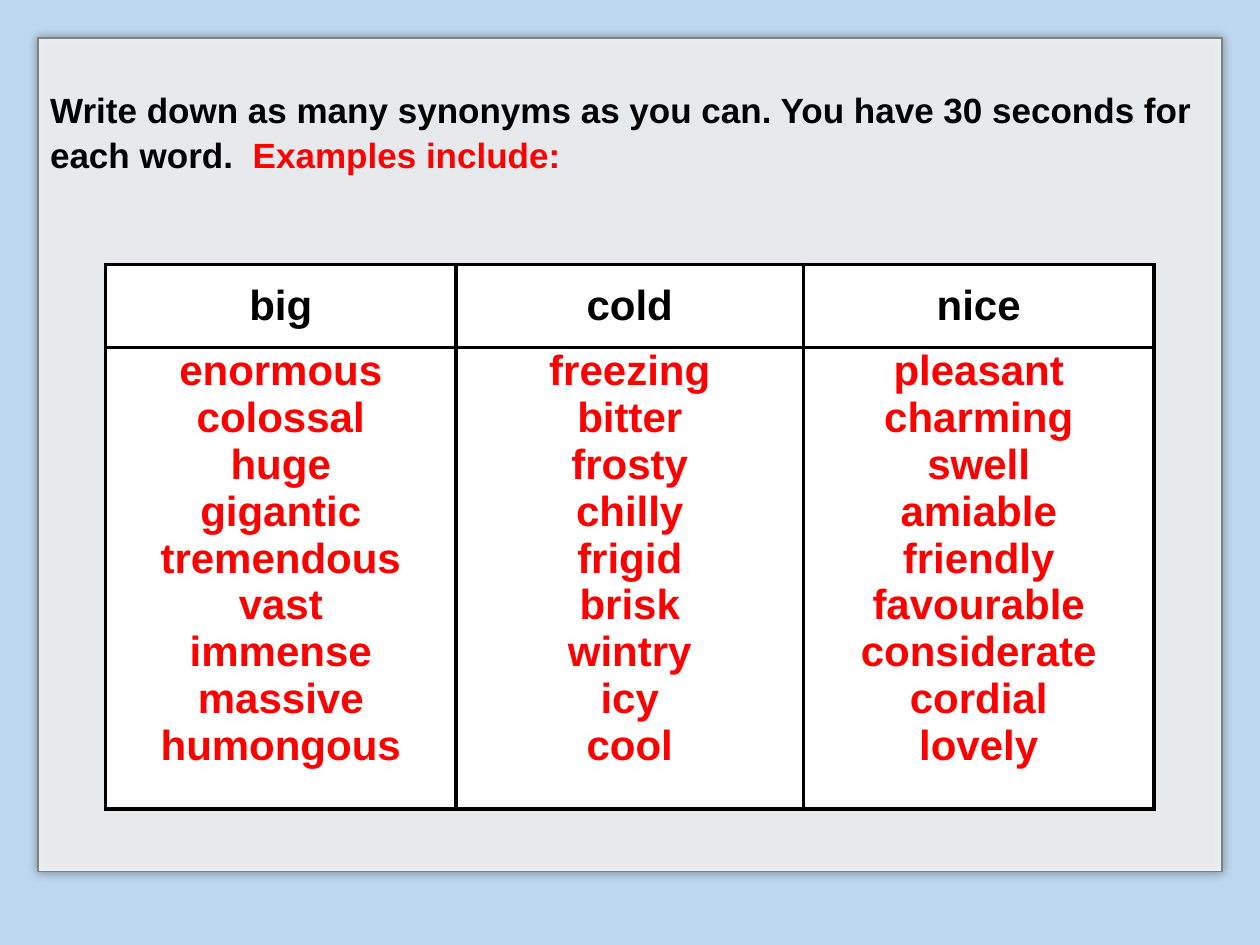
from dataclasses import dataclass

from lxml import etree
from pptx import Presentation
from pptx import util as u
from pptx.dml.color import RGBColor
from pptx.enum import shapes, text
from pptx.oxml.ns import qn


@dataclass(frozen=True)
class Theme:
    font: str = "Arial"
    background: str = "BDD7EE"
    panel: str = "FFFFFF"
    panel_line: str = "808080"
    ink: str = "000000"
    answer: str = "FF0000"
    instruction_size: int = 20
    word_size: int = 24
    grid_width: float = 2.25


SYNONYMS = {
    "big": ["enormous", "colossal", "huge", "gigantic", "tremendous",
            "vast", "immense", "massive", "humongous"],
    "cold": ["freezing", "bitter", "frosty", "chilly", "frigid",
             "brisk", "wintry", "icy", "cool"],
    "nice": ["pleasant", "charming", "swell", "amiable", "friendly",
             "favourable", "considerate", "cordial", "lovely"],
}


def add_solid_color(parent, color, opacity=None):
    """Append a:srgbClr, with an optional opacity in percent."""
    node = etree.SubElement(parent, qn("a:srgbClr"), val=color)
    if opacity is not None:
        etree.SubElement(node, qn("a:alpha"), val=str(opacity * 1000))


class SlideBuilder:
    def __init__(self, slide, theme):
        self.slide = slide
        self.theme = theme
        self.fill(slide.background, theme.background)

    def fill(self, target, color):
        target.fill.solid()
        target.fill.fore_color.rgb = RGBColor.from_string(color)

    def format_run(self, run, size, color):
        run.font.name = self.theme.font
        run.font.size = u.Pt(size)
        run.font.bold = True
        run.font.color.rgb = RGBColor.from_string(color)

    def add_panel(self, left, top, width, height, parts):
        """Add the translucent, glowing panel; parts are (wording, color) runs."""
        panel = self.slide.shapes.add_shape(
            shapes.MSO_SHAPE.RECTANGLE,
            u.Cm(left), u.Cm(top), u.Cm(width), u.Cm(height))
        self.fill(panel, self.theme.panel)
        color = panel.fill._xPr.find(qn("a:solidFill")).find(qn("a:srgbClr"))
        etree.SubElement(color, qn("a:alpha"), val="82000")
        panel.line.color.rgb = RGBColor.from_string(self.theme.panel_line)
        panel.line.width = u.Pt(1)

        panel.shadow.inherit = False
        effects = panel._element.spPr.find(qn("a:effectLst"))
        shadow = etree.SubElement(effects, qn("a:outerShdw"), blurRad=str(u.Pt(5)),
                                  dist="0", dir="0", algn="ctr", rotWithShape="0")
        add_solid_color(shadow, self.theme.ink, 40)

        frame = panel.text_frame
        frame.word_wrap = True
        frame.vertical_anchor = text.MSO_ANCHOR.TOP
        frame.margin_top = u.Cm(0.97)
        paragraph = frame.paragraphs[0]
        paragraph.alignment = text.PP_ALIGN.LEFT
        paragraph.line_spacing = 1.07
        for wording, run_color in parts:
            run = paragraph.add_run()
            run.text = wording
            self.format_run(run, self.theme.instruction_size, run_color)

    def add_borders(self, cell):
        properties = cell._tc.get_or_add_tcPr()
        for side in ("lnL", "lnR", "lnT", "lnB"):
            line = etree.SubElement(properties, qn(f"a:{side}"),
                                    w=str(u.Pt(self.theme.grid_width)))
            add_solid_color(etree.SubElement(line, qn("a:solidFill")), self.theme.ink)

    def fill_cell(self, cell, wording, color, anchor):
        self.add_borders(cell)
        self.fill(cell, self.theme.panel)
        cell.margin_left = cell.margin_right = 0
        cell.margin_top = cell.margin_bottom = 0
        cell.vertical_anchor = anchor
        cell.text_frame.text = wording
        for paragraph in cell.text_frame.paragraphs:
            paragraph.alignment = text.PP_ALIGN.CENTER
            for run in paragraph.runs:
                self.format_run(run, self.theme.word_size, color)

    def add_word_table(self, left, top, widths, heights, columns):
        """Add a table with a heading and a list of words in each column."""
        table = self.slide.shapes.add_table(
            len(heights), len(widths), u.Cm(left), u.Cm(top),
            u.Cm(sum(widths)), u.Cm(sum(heights))).table
        for row, height in zip(table.rows, heights):
            row.height = u.Cm(height)
        for index, (heading, words) in enumerate(columns.items()):
            table.columns[index].width = u.Cm(widths[index])
            self.fill_cell(table.cell(0, index), heading, self.theme.ink,
                           text.MSO_ANCHOR.MIDDLE)
            self.fill_cell(table.cell(1, index), "\n".join(words), self.theme.answer,
                           text.MSO_ANCHOR.TOP)


def main():
    presentation = Presentation()
    presentation.slide_width = u.Cm(25.4)
    presentation.slide_height = u.Cm(19.05)
    theme = Theme()
    builder = SlideBuilder(
        presentation.slides.add_slide(presentation.slide_layouts[6]), theme)
    builder.add_panel(0.76, 0.76, 23.88, 16.81, [
        ("Write down as many synonyms as you can. "
         "You have 30 seconds for each word.  ", theme.ink),
        ("Examples include:", theme.answer),
    ])
    builder.add_word_table(2.13, 5.33, (7.06, 7.01, 7.06), (1.68, 9.3), SYNONYMS)
    presentation.save("out.pptx")


if __name__ == "__main__":
    main()
